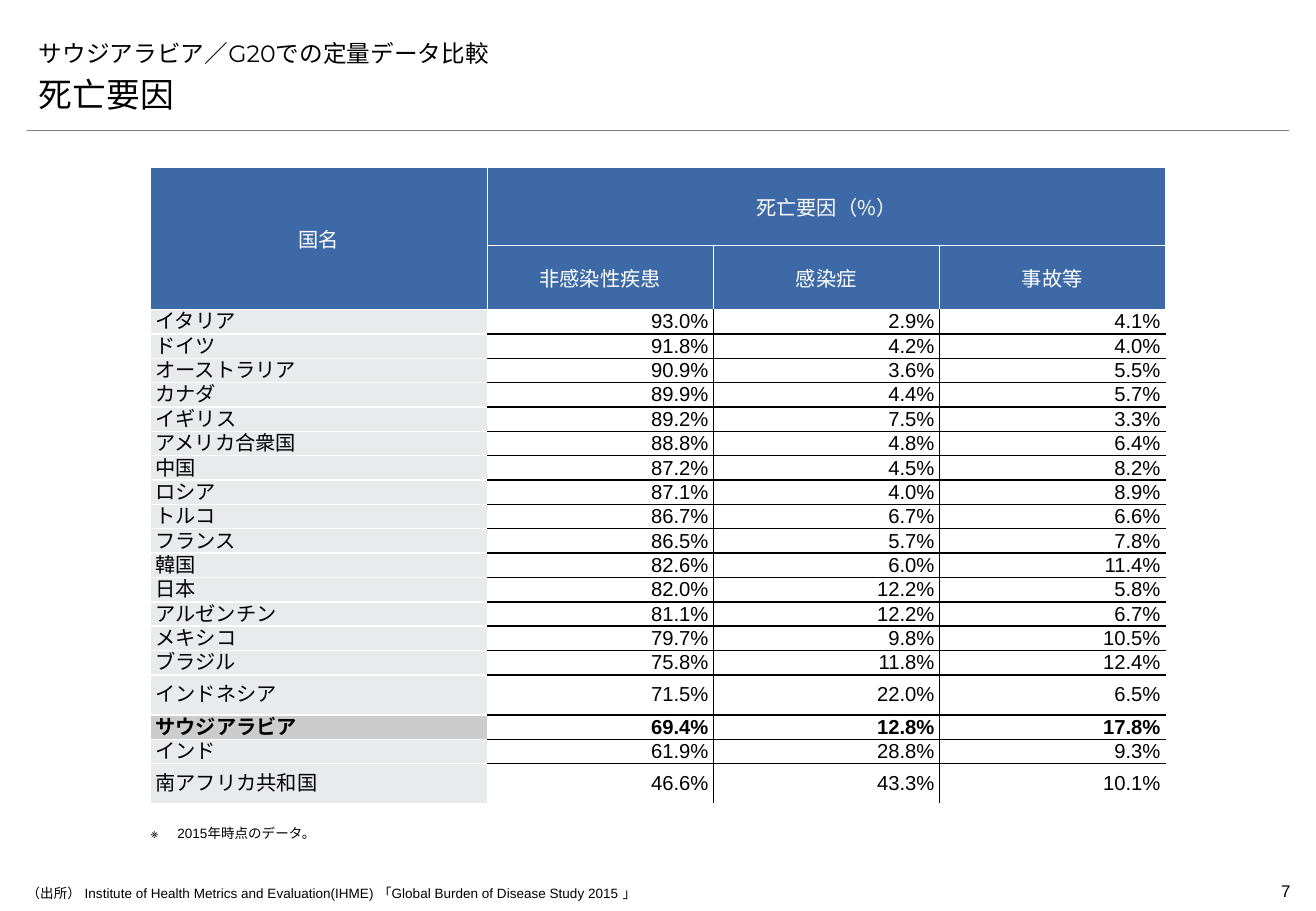
import pptx
import pptx.dml.color
import pptx.enum.shapes
import pptx.enum.text
import pptx.oxml
import pptx.oxml.ns
import pptx.util

PX = 9144  # 100 px to the inch
ALIGN = pptx.enum.text.PP_ALIGN
ANCHOR = pptx.enum.text.MSO_ANCHOR
COLORS = {
    "text": "000000", "white": "FFFFFF", "rule": "7F7F7F",
    "header": "3D6AA7", "name": "E8EAEC", "focus": "CCCCCC",
}
HEADING_FONT, BODY_FONT, HEADER_FONT = "Montserrat", "Arial", "Noto Sans CJK JP"

FOCUS = "サウジアラビア"
TALL = {"インドネシア", "南アフリカ共和国"}
DEATHS = [
    ("イタリア", 93.0, 2.9, 4.1),
    ("ドイツ", 91.8, 4.2, 4.0),
    ("オーストラリア", 90.9, 3.6, 5.5),
    ("カナダ", 89.9, 4.4, 5.7),
    ("イギリス", 89.2, 7.5, 3.3),
    ("アメリカ合衆国", 88.8, 4.8, 6.4),
    ("中国", 87.2, 4.5, 8.2),
    ("ロシア", 87.1, 4.0, 8.9),
    ("トルコ", 86.7, 6.7, 6.6),
    ("フランス", 86.5, 5.7, 7.8),
    ("韓国", 82.6, 6.0, 11.4),
    ("日本", 82.0, 12.2, 5.8),
    ("アルゼンチン", 81.1, 12.2, 6.7),
    ("メキシコ", 79.7, 9.8, 10.5),
    ("ブラジル", 75.8, 11.8, 12.4),
    ("インドネシア", 71.5, 22.0, 6.5),
    (FOCUS, 69.4, 12.8, 17.8),
    ("インド", 61.9, 28.8, 9.3),
    ("南アフリカ共和国", 46.6, 43.3, 10.1),
]


def px(n):
    return pptx.util.Emu(n * PX)


def rgb(color):
    return pptx.dml.color.RGBColor.from_string(COLORS[color])


def element(xml):
    """Parse an XML fragment whose root carries the {ns} mark."""
    return pptx.oxml.parse_xml(xml.replace("{ns}", pptx.oxml.ns.nsdecls("a")))


class Deck:
    def __init__(self, width, height):
        self.prs = pptx.Presentation()
        self.prs.slide_width, self.prs.slide_height = px(width), px(height)
        self.s = self.prs.slides.add_slide(self.prs.slide_layouts[1])

    def run(self, p, text, size, font, color="text", bold=False):
        r = p.add_run()
        r.text = text
        r.font.size, r.font.name, r.font.bold = pptx.util.Pt(size), font, bold
        r.font.color.rgb = rgb(color)
        r.font._element.append(element(f'<a:ea {{ns}} typeface="{font}"/>'))

    def heading(self, idx, box, text, size):
        sp = self.s.placeholders[idx]
        sp.left, sp.top, sp.width, sp.height = map(px, box)
        tf = sp.text_frame
        tf.auto_size = pptx.enum.text.MSO_AUTO_SIZE.NONE
        tf.vertical_anchor = ANCHOR.BOTTOM
        p = tf.paragraphs[0]
        pPr = p._p.get_or_add_pPr()
        pPr.set("marL", "0")
        pPr.set("indent", "0")
        pPr.append(element("<a:buNone {ns}/>"))
        p.alignment, p.space_before = ALIGN.LEFT, pptx.util.Pt(0)
        self.run(p, text, size, HEADING_FONT)

    def text(self, box, text, size, inset=0, align=ALIGN.LEFT, hanging=0):
        tf = self.s.shapes.add_textbox(*map(px, box)).text_frame
        tf.word_wrap = True
        tf.margin_left = tf.margin_right = 0
        tf.margin_top = tf.margin_bottom = px(inset)
        p = tf.paragraphs[0]
        p.alignment = align
        if hanging:
            pPr = p._p.get_or_add_pPr()
            pPr.set("marL", str(px(hanging)))
            pPr.set("indent", str(px(-hanging)))
        self.run(p, text, size, BODY_FONT)

    def rule(self, x1, x2, y):
        c = self.s.shapes.add_connector(
            pptx.enum.shapes.MSO_CONNECTOR.STRAIGHT, px(x1), px(y), px(x2), px(y))
        c.line.color.rgb, c.line.width = rgb("rule"), pptx.util.Pt(0.25)
        c._element.spPr.append(element("<a:effectLst {ns}/>"))

    def table(self, x, y, widths, heights):
        frame = self.s.shapes.add_table(
            len(heights), len(widths), px(x), px(y), px(sum(widths)), px(sum(heights)))
        t = frame.table
        t.first_row = t.horz_banding = False
        for col, width in zip(t.columns, widths):
            col.width = px(width)
        for row, height in zip(t.rows, heights):
            row.height = px(height)
        return t

    def cell(self, cell, text, align, font=BODY_FONT, color="text",
             fill=None, bold=False, dark=""):
        """Fill a cell; the sides named in dark get black borders, the rest white."""
        cell.margin_left = cell.margin_right = px(4)
        cell.margin_top = cell.margin_bottom = 0
        cell.vertical_anchor = ANCHOR.MIDDLE
        for side in "LRTB":
            line = COLORS["text" if side in dark else "white"]
            cell._tc.get_or_add_tcPr().append(element(
                f'<a:ln{side} {{ns}} w="12700"><a:solidFill><a:srgbClr val="{line}"/>'
                f'</a:solidFill></a:ln{side}>'))
        if fill:
            cell.fill.solid()
            cell.fill.fore_color.rgb = rgb(fill)
        else:
            cell.fill.background()
        p = cell.text_frame.paragraphs[0]
        p.alignment = align
        if text:
            self.run(p, text, 12, font, color, bold)


def main():
    d = Deck(1083, 750)
    d.rule(22, 1061, 107)
    d.text((983, 720, 79, 27), "7", 10, inset=5, align=ALIGN.RIGHT)
    d.heading(0, (22, 21, 1039, 39), "サウジアラビア／G20での定量データ比較", 14)
    d.heading(1, (22, 60, 1040, 39), "死亡要因", 20)
    d.text((22, 729, 614, 16), "（出所） Institute of Health Metrics and Evaluation(IHME) "
           "「Global Burden of Disease Study 2015 」", 8)
    d.text((124, 674, 937, 24), "※\t2015年時点のデータ。", 8, inset=5,
           align=ALIGN.JUSTIFY, hanging=22)

    heights = [64, 53] + [33 if row[0] in TALL else 20 for row in DEATHS]
    t = d.table(124, 138, [277, 186, 186, 186], heights)
    headers = [("国名", "死亡要因（%）", "", ""), ("", "非感染性疾患", "感染症", "事故等")]
    for i, labels in enumerate(headers):
        for j, label in enumerate(labels):
            d.cell(t.cell(i, j), label, ALIGN.CENTER, HEADER_FONT, "white", "header")
    t.cell(0, 0).merge(t.cell(1, 0))
    t.cell(0, 1).merge(t.cell(0, 3))

    for i, (name, *shares) in enumerate(DEATHS):
        bold = name == FOCUS
        d.cell(t.cell(i + 2, 0), name, ALIGN.LEFT, bold=bold,
               fill="focus" if bold else "name")
        rows_dark = ("T" if i > 0 else "") + ("B" if i < len(DEATHS) - 1 else "")
        for j, (share, cols_dark) in enumerate(zip(shares, ("R", "LR", "L")), 1):
            d.cell(t.cell(i + 2, j), f"{share:.1f}%", ALIGN.RIGHT, bold=bold,
                   dark=rows_dark + cols_dark)
    d.prs.save("out.pptx")


if __name__ == "__main__":
    main()
